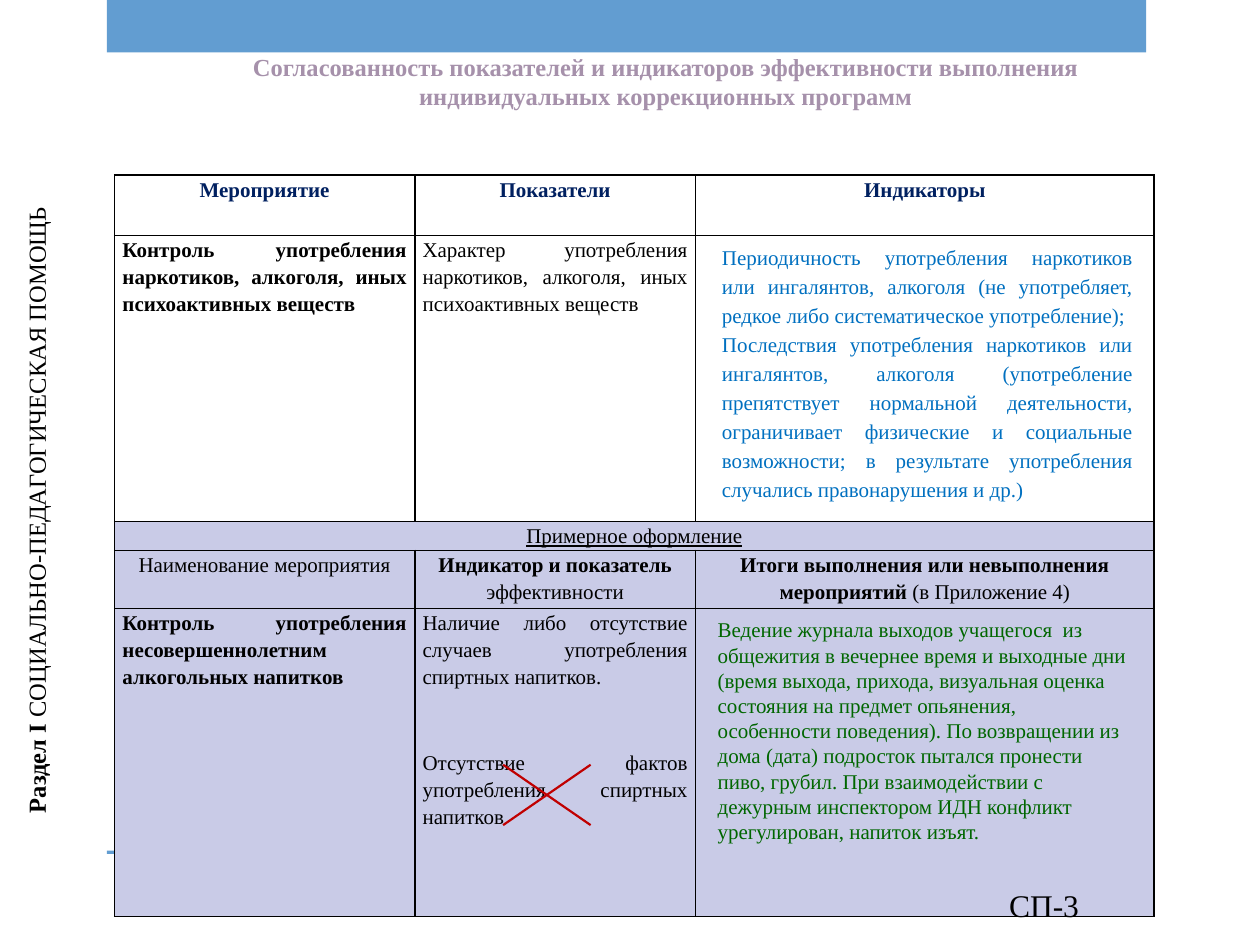
import pptx
import pptx.dml.color
import pptx.enum.shapes
import pptx.enum.text
import pptx.oxml
import pptx.oxml.ns
import pptx.util

Pt = pptx.util.Pt
ALIGN = pptx.enum.text.PP_ALIGN
CENTER, LEFT, JUSTIFY = ALIGN.CENTER, ALIGN.LEFT, ALIGN.JUSTIFY
SHAPE = pptx.enum.shapes.MSO_SHAPE
STRAIGHT = pptx.enum.shapes.MSO_CONNECTOR.STRAIGHT
NS = pptx.oxml.ns.nsdecls("a")


def color(value):
    return pptx.dml.color.RGBColor.from_string(value)


class Deck:
    font = "Times New Roman"
    blue, lilac, red = "629DD1", "C9CBE7", "C00000"
    black, navy, mauve = "000000", "002060", "A691AB"

    def __init__(self, width, height):
        self.prs = pptx.Presentation()
        self.prs.slide_width, self.prs.slide_height = Pt(width), Pt(height)
        self.s = self.prs.slides.add_slide(self.prs.slide_layouts[5])

    def fill_text(self, tf, paragraphs, size, fill, align=LEFT, spacing=1.0,
                  bold=False, underline=False, gap=0):
        """Fill tf; a paragraph is a string or a list of (text, bold) runs."""
        for i, content in enumerate(paragraphs):
            p = tf.add_paragraph() if i else tf.paragraphs[0]
            p.alignment, p.line_spacing = align, spacing
            p.space_before, p.space_after = Pt(gap if i else 0), Pt(0)
            p.font.name, p.font.size = self.font, Pt(size)
            p.font.color.rgb = color(fill)
            p.font.underline = underline
            if isinstance(content, str):
                p.font.bold = bold
                content = [(content, None)]
            for text, run_bold in content:
                r = p.add_run()
                r.text, r.font.bold = text, run_bold

    def bar(self, x, y, w, h):
        sp = self.s.shapes.add_shape(SHAPE.RECTANGLE, Pt(x), Pt(y), Pt(w), Pt(h))
        sp.shadow.inherit = False
        sp.fill.solid()
        sp.fill.fore_color.rgb = color(self.blue)
        sp.line.fill.background()

    def title(self, x, y, w, h, paragraphs):
        sp = self.s.shapes.title
        sp.left, sp.top, sp.width, sp.height = Pt(x), Pt(y), Pt(w), Pt(h)
        tf = sp.text_frame
        tf.vertical_anchor = pptx.enum.text.MSO_ANCHOR.TOP
        tf.auto_size = pptx.enum.text.MSO_AUTO_SIZE.SHAPE_TO_FIT_TEXT
        self.fill_text(tf, paragraphs, 14, self.mauve, CENTER, bold=True)

    def text(self, x, y, w, h, paragraphs, size, fill, rotation=0, **style):
        sp = self.s.shapes.add_textbox(Pt(x), Pt(y), Pt(w), Pt(h))
        sp.rotation = rotation
        tf = sp.text_frame
        tf.word_wrap = True
        tf.auto_size = pptx.enum.text.MSO_AUTO_SIZE.SHAPE_TO_FIT_TEXT
        self.fill_text(tf, paragraphs, size, fill, **style)

    def line(self, x1, y1, x2, y2):
        c = self.s.shapes.add_connector(STRAIGHT, Pt(x1), Pt(y1), Pt(x2), Pt(y2))
        c.line.color.rgb, c.line.width = color(self.red), Pt(1.25)
        c._element.spPr.append(pptx.oxml.parse_xml(f"<a:effectLst {NS}/>"))

    def table(self, x, y, widths, heights):
        frame = self.s.shapes.add_table(len(heights), len(widths), Pt(x), Pt(y),
                                        Pt(sum(widths)), Pt(sum(heights)))
        table = frame.table
        table.first_row = table.horz_banding = False
        for column, width in zip(table.columns, widths):
            column.width = Pt(width)
        for row, height in zip(table.rows, heights):
            row.height = Pt(height)
        return table

    def cell(self, cell, paragraphs, fill=None, ink=black, **style):
        cell.margin_left = cell.margin_right = Pt(4.5)
        cell.margin_top = cell.margin_bottom = 0
        self.fill_text(cell.text_frame, paragraphs, 12, ink, spacing=1.15, **style)
        tcPr = cell._tc.get_or_add_tcPr()
        for side in ("lnL", "lnR", "lnT", "lnB"):
            tcPr.append(pptx.oxml.parse_xml(
                f'<a:{side} {NS} w="12700"><a:solidFill>'
                f'<a:srgbClr val="{self.black}"/></a:solidFill></a:{side}>'))
        if fill:
            cell.fill.solid()
            cell.fill.fore_color.rgb = color(fill)
        else:
            cell.fill.background()


HEADER = dict(ink=Deck.navy, align=CENTER, bold=True)
BODY = dict(align=JUSTIFY, gap=34)
CAPTION = dict(fill=Deck.lilac, align=CENTER, underline=True)
SUBHEADER = dict(fill=Deck.lilac, align=CENTER)
EXAMPLE = dict(fill=Deck.lilac, **BODY)

ROWS = [
    (34.5, HEADER, [["Мероприятие"], ["Показатели"], ["Индикаторы"]]),
    (163.5, BODY, [
        [[("Контроль употребления наркотиков, алкоголя, иных психоактивных веществ", True)]],
        ["Характер употребления наркотиков, алкоголя, иных психоактивных веществ"],
        []]),
    (14.5, CAPTION, [["Примерное оформление"], [], []]),
    (29.5, SUBHEADER, [
        ["Наименование мероприятия"],
        [[("Индикатор и показатель ", True), ("эффективности", False)]],
        [[("Итоги выполнения или невыполнения мероприятий ", True),
          ("(в Приложение 4)", False)]]]),
    (176, EXAMPLE, [
        [[("Контроль употребления несовершеннолетним алкогольных напитков", True)]],
        ["Наличие либо отсутствие случаев употребления спиртных напитков.",
         "Отсутствие фактов употребления спиртных напитков"],
        []]),
]


def main():
    deck = Deck(720, 540)
    deck.bar(61, 0, 594, 30)
    deck.bar(61, 486, 594, 2)

    table = deck.table(65.5, 100, [171.5, 160.5, 262], [row[0] for row in ROWS])
    for i, (_, style, cells) in enumerate(ROWS):
        for j, paragraphs in enumerate(cells):
            deck.cell(table.cell(i, j), paragraphs, **style)
    table.cell(2, 0).merge(table.cell(2, 2))

    deck.text(-169, 269.5, 380, 24.5,
              [[("Раздел I", True), (" СОЦИАЛЬНО-ПЕДАГОГИЧЕСКАЯ ПОМОЩЬ", False)]],
              14, Deck.black, rotation=270)
    deck.title(60, 26, 641, 41, [
        "Согласованность показателей и индикаторов эффективности выполнения",
        "индивидуальных коррекционных программ"])
    deck.text(405.5, 134, 249, 172, [
        "Периодичность употребления наркотиков или ингалянтов, алкоголя "
        "(не употребляет, редкое либо систематическое употребление);",
        "Последствия употребления наркотиков или ингалянтов, алкоголя "
        "(употребление препятствует нормальной деятельности, ограничивает "
        "физические и социальные возможности; в результате употребления "
        "случались правонарушения и др.)"],
        12, "0070C0", align=JUSTIFY, spacing=1.15)
    deck.text(403, 349, 249, 152.5, [
        "Ведение журнала выходов учащегося  из общежития в вечернее время и "
        "выходные дни (время выхода, прихода, визуальная оценка состояния на "
        "предмет опьянения, особенности поведения). По возвращении из дома "
        "(дата) подросток пытался пронести пиво, грубил. При взаимодействии "
        "с дежурным инспектором ИДН конфликт урегулирован, напиток изъят."],
        12, "006600")

    left, top, right, bottom = 287.5, 437, 337.5, 471.5
    deck.line(right, bottom, left, top)
    deck.line(left, bottom, right, top)
    deck.text(569.5, 502.5, 67.5, 29, ["СП-3"], 18, Deck.black)
    deck.prs.save("out.pptx")


if __name__ == "__main__":
    main()
